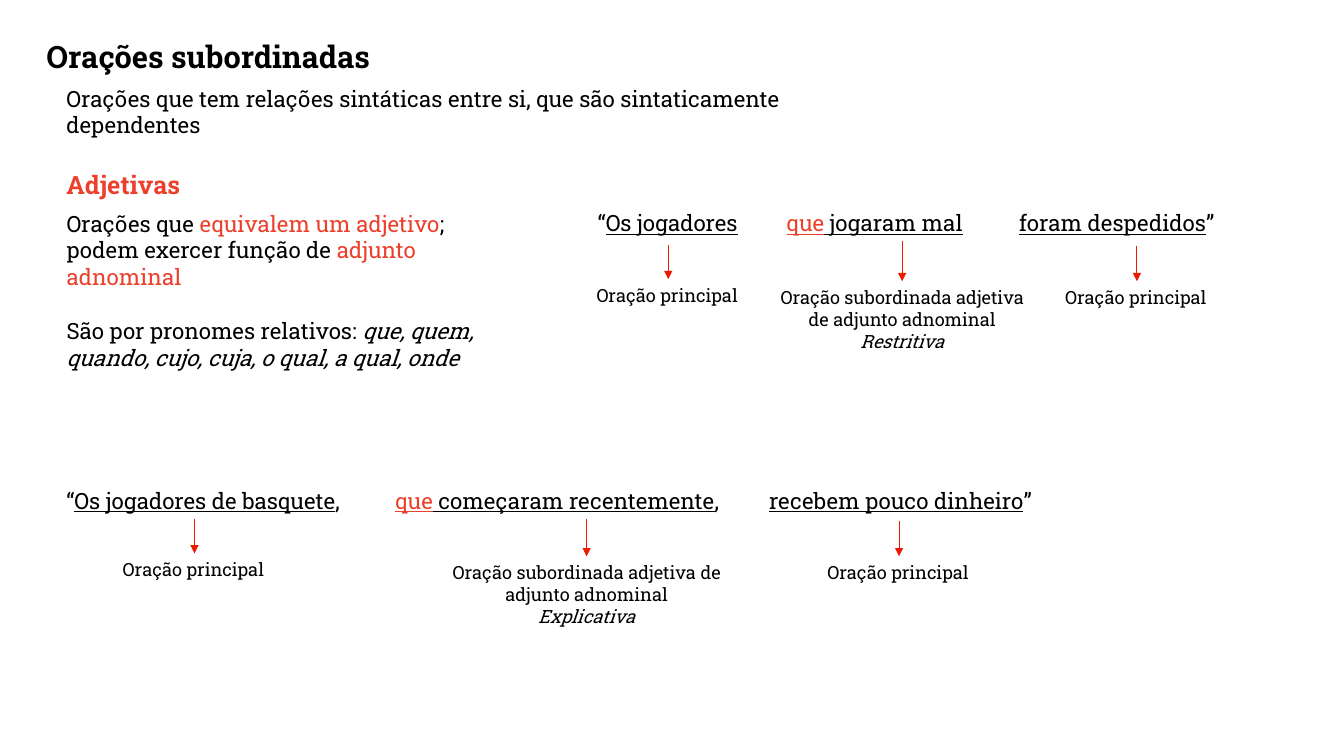
from lxml import etree
from pptx import Presentation
from pptx import util as u
from pptx.dml.color import RGBColor
from pptx.enum import shapes, text
from pptx.oxml.ns import qn

COLORS = {"text": "000000", "accent": "EB402C", "arrow": "ED1A02"}
ACCENT = {"color": "accent"}
UNDERLINE = {"underline": True}
ITALIC = {"italic": True}
ACCENT_UNDERLINE = {**ACCENT, **UNDERLINE}
LEFT, CENTER = text.PP_ALIGN.LEFT, text.PP_ALIGN.CENTER


def fill_text(shape, box, paragraphs, size, align=LEFT, wrap=True, bold=False):
    """Place a shape and write paragraphs, each a list of (wording, format) runs."""
    for name, value in zip(("left", "top", "width", "height"), box):
        setattr(shape, name, u.Pt(value))
    frame = shape.text_frame
    frame_format = {
        "word_wrap": wrap,
        "auto_size": text.MSO_AUTO_SIZE.SHAPE_TO_FIT_TEXT,
        "vertical_anchor": text.MSO_ANCHOR.TOP,
    }
    for name, value in frame_format.items():
        setattr(frame, name, value)
    for index, runs in enumerate(paragraphs):
        paragraph = frame.add_paragraph() if index else frame.paragraphs[0]
        paragraph.alignment = align
        paragraph.space_before = u.Pt(0)
        for wording, run_format in runs:
            run = paragraph.add_run()
            run.text = wording
            font_format = {"name": "Roboto Slab", "size": u.Pt(size), "bold": bold, **run_format}
            color = font_format.pop("color", "text")
            for name, value in font_format.items():
                setattr(run.font, name, value)
            run.font.color.rgb = RGBColor.from_string(COLORS[color])
    return shape


def add_text(box, paragraphs, size, **options):
    """Add a text box and fill it."""
    shape = slide.shapes.add_textbox(*[u.Pt(value) for value in box])
    return fill_text(shape, box, paragraphs, size, **options)


presentation = Presentation()
presentation.slide_width = u.Pt(960)
presentation.slide_height = u.Pt(540)
slide = presentation.slides.add_slide(presentation.slide_layouts[1])

# Title, definition and section heading
fill_text(slide.shapes.title, (26, 23, 260, 34), [[("Orações subordinadas", {})]],
          22, wrap=False, bold=True)
definition = "Orações que tem relações sintáticas entre si, que são sintaticamente dependentes"
add_text((40.3, 57, 618.5, 26.6), [[(definition, {})]], 16)
add_text((40.3, 117.4, 98.6, 29), [[("Adjetivas", ACCENT)]], 18, wrap=False, bold=True)

# Explanation
explanation = fill_text(slide.placeholders[1], (40.3, 146.2, 310.3, 123.8), [
    [("Orações que ", {}), ("equivalem um adjetivo", ACCENT),
     ("; podem exercer função de ", {}), ("adjunto adnominal", ACCENT)],
    [("São por pronomes relativos: ", {}),
     ("que, quem, quando, cujo, cuja, o qual, a qual, onde", ITALIC)],
], 16)
for paragraph in explanation.text_frame.paragraphs:
    properties = paragraph._p.get_or_add_pPr()
    properties.set("marL", "0")
    properties.set("indent", "0")
    etree.SubElement(properties, qn("a:buNone"))
explanation.text_frame.paragraphs[1].space_before = u.Pt(19.4)

# Example sentences: box, tab stops, runs, and labels as
# (left, top, width, arrow start, kind of subordinate clause)
examples = [
    {
        "box": (419.8, 146.2, 462.2, 26.6),
        "tabs": (135, 301),
        "runs": [("“", {}), ("Os jogadores", UNDERLINE), ("\t", {}),
                 ("que", ACCENT_UNDERLINE), (" jogaram mal", UNDERLINE), ("\t", {}),
                 ("foram despedidos", UNDERLINE), ("”", {})],
        "labels": [(419, 199.4, 116.6, 175, None),
                   (547.9, 200.9, 193, 172, "Restritiva"),
                   (753.8, 200.9, 116.6, 175.7, None)],
    },
    {
        "box": (40.3, 344.2, 757.4, 26.6),
        "tabs": (235, 502),
        "runs": [("“", {}), ("Os jogadores de basquete", UNDERLINE), (",\t", {}),
                 ("que", ACCENT_UNDERLINE), (" começaram recentemente", UNDERLINE), (",\t", {}),
                 ("recebem pouco dinheiro", UNDERLINE), ("”", {})],
        "labels": [(80.6, 395.3, 116.6, 370.8, None),
                   (299.5, 397.4, 239, 370.8, "Explicativa"),
                   (583.9, 397.4, 116.6, 372.2, None)],
    },
]
for example in examples:
    sentence = add_text(example["box"], [example["runs"]], 16)
    properties = sentence.text_frame.paragraphs[0]._p.get_or_add_pPr()
    tab_list = etree.SubElement(properties, qn("a:tabLst"))
    for stop in example["tabs"]:
        etree.SubElement(tab_list, qn("a:tab"), pos=str(u.Pt(stop)), algn="l")

    for left, top, width, arrow_top, kind in example["labels"]:
        # Clause label
        if kind:
            clause = "Oração subordinada adjetiva de adjunto adnominal"
            label = add_text((left, top, width, 54.7), [[(clause, {})], [(kind, ITALIC)]],
                             13, align=CENTER)
        else:
            label = add_text((left, top, width, 23), [[("Oração principal", {})]],
                             13, wrap=False)

        # Arrow from the sentence down to its label
        middle = left + width / 2
        arrow = slide.shapes.add_connector(shapes.MSO_CONNECTOR.STRAIGHT, u.Pt(middle),
                                           u.Pt(arrow_top), u.Pt(middle), u.Pt(top))
        if kind == "Explicativa":
            arrow.begin_connect(sentence, 2)
        arrow.end_connect(label, 0)
        arrow.line.width = u.Pt(0.75)
        arrow.line.color.rgb = RGBColor.from_string(COLORS["arrow"])
        etree.SubElement(arrow.line._get_or_add_ln(), qn("a:tailEnd"), type="triangle")
        etree.SubElement(arrow._element.spPr, qn("a:effectLst"))

presentation.save("out.pptx")
